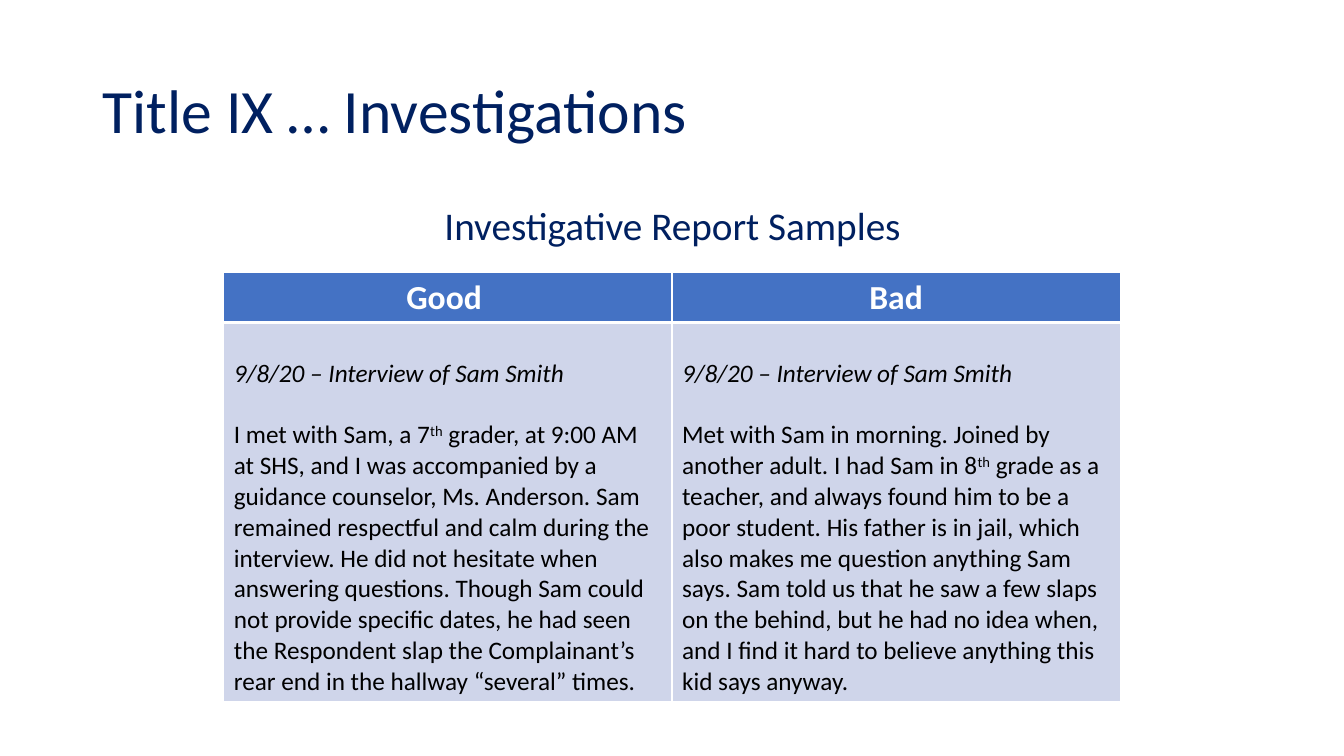
import pptx
import pptx.util
import pptx.dml.color
import pptx.enum.text
import pptx.oxml

Inch = pptx.util.Inches
Align = pptx.enum.text.PP_ALIGN
Anchor = pptx.enum.text.MSO_ANCHOR

HEADS = [
    {"text": "Title IX … Investigations", "box": (0.92, 0.4, 11.5, 1.45),
     "size": "title", "align": Align.LEFT, "anchor": Anchor.MIDDLE},
    {"text": "Investigative Report Samples", "box": (0.92, 2, 11.5, 4.76),
     "size": "topic", "align": Align.CENTER, "anchor": Anchor.TOP},
]
DATE = "9/8/20 – Interview of Sam Smith"
SAMPLES = [
    ("Good ", "I met with Sam, a 7",
     " grader, at 9:00 AM at SHS, and I was accompanied by a guidance counselor, "
     "Ms. Anderson. Sam remained respectful and calm during the interview. He did "
     "not hesitate when answering questions. Though Sam could not provide specific "
     "dates, he had seen the Respondent slap the Complainant’s rear end in the "
     "hallway “several” times."),
    ("Bad", "Met with Sam in morning. Joined by another adult. I had Sam in 8",
     " grade as a teacher, and always found him to be a poor student. His father is "
     "in jail, which also makes me question anything Sam says. Sam told us that he "
     "saw a few slaps on the behind, but he had no idea when, and I find it hard to "
     "believe anything this kid says anyway."),
]
GRID = {"left": 2.22, "top": 2.7, "width": 8.89, "rows": (0.5, 3.76)}
THEME = {
    "font": "Calibri",
    "navy": "002060", "blue": "4472C4", "pale": "CFD5EA",
    "white": "FFFFFF", "black": "000000",
    "title": 44, "topic": 28, "head": 24, "body": 18,
    "thin": 1, "thick": 3,
}
GAP = 22
PAD = 0.05


def color(name):
    return pptx.dml.color.RGBColor.from_string(THEME[name])


def apply(item, values):
    for key, value in values.items():
        setattr(item, key, value)


def write(para, text, size, ink, **more):
    run = para.add_run()
    run.text = text
    apply(run.font, {"name": THEME["font"], "size": pptx.util.Pt(THEME[size]), **more})
    run.font.color.rgb = color(ink)
    return run


def paint(cell, fill, edges):
    cell.fill.solid()
    cell.fill.fore_color.rgb = color(fill)
    props = cell._tc.get_or_add_tcPr()
    for place, (side, weight) in enumerate(edges.items()):
        width = pptx.util.Pt(THEME[weight])
        props.insert(place, pptx.oxml.parse_xml(
            '<a:ln%s xmlns:a="http://schemas.openxmlformats.org/drawingml/2006/main" '
            'w="%d"><a:solidFill><a:srgbClr val="%s"/></a:solidFill></a:ln%s>'
            % (side, width, THEME["white"], side)))


def add_head(slide, head):
    frame = slide.shapes.add_textbox(*map(Inch, head["box"])).text_frame
    apply(frame, {"word_wrap": True, "vertical_anchor": head["anchor"]})
    para = frame.paragraphs[0]
    apply(para, {"alignment": head["align"], "line_spacing": 0.9})
    write(para, head["text"], head["size"], "navy")


def add_grid(slide):
    rows = GRID["rows"]
    table = slide.shapes.add_table(
        len(rows), len(SAMPLES), Inch(GRID["left"]), Inch(GRID["top"]),
        Inch(GRID["width"]), Inch(sum(rows))).table
    table.horz_banding = False
    for row, height in zip(table.rows, rows):
        row.height = Inch(height)
    for col, (label, start, rest) in enumerate(SAMPLES):
        table.columns[col].width = Inch(GRID["width"] / len(SAMPLES))
        head, body = (table.cell(row, col) for row in range(len(rows)))
        paint(head, "blue", {"L": "thin", "R": "thin", "T": "thin", "B": "thick"})
        paint(body, "pale", {"L": "thin", "R": "thin", "T": "thick", "B": "thin"})

        para = head.text_frame.paragraphs[0]
        para.alignment = Align.CENTER
        write(para, label, "head", "white", bold=True)

        body.margin_top = Inch(PAD) + pptx.util.Pt(GAP)
        write(body.text_frame.paragraphs[0], DATE, "body", "black", italic=True)
        para = body.text_frame.add_paragraph()
        para.space_before = pptx.util.Pt(GAP)
        write(para, start, "body", "black")
        raised = write(para, "th", "body", "black")
        raised.font._element.set("baseline", "30000")
        write(para, rest, "body", "black")


def main():
    deck = pptx.Presentation()
    apply(deck, {"slide_width": Inch(13.33), "slide_height": Inch(7.5)})
    slide = deck.slides.add_slide(deck.slide_layouts[6])
    for head in HEADS:
        add_head(slide, head)
    add_grid(slide)
    deck.save("out.pptx")


if __name__ == "__main__":
    main()
